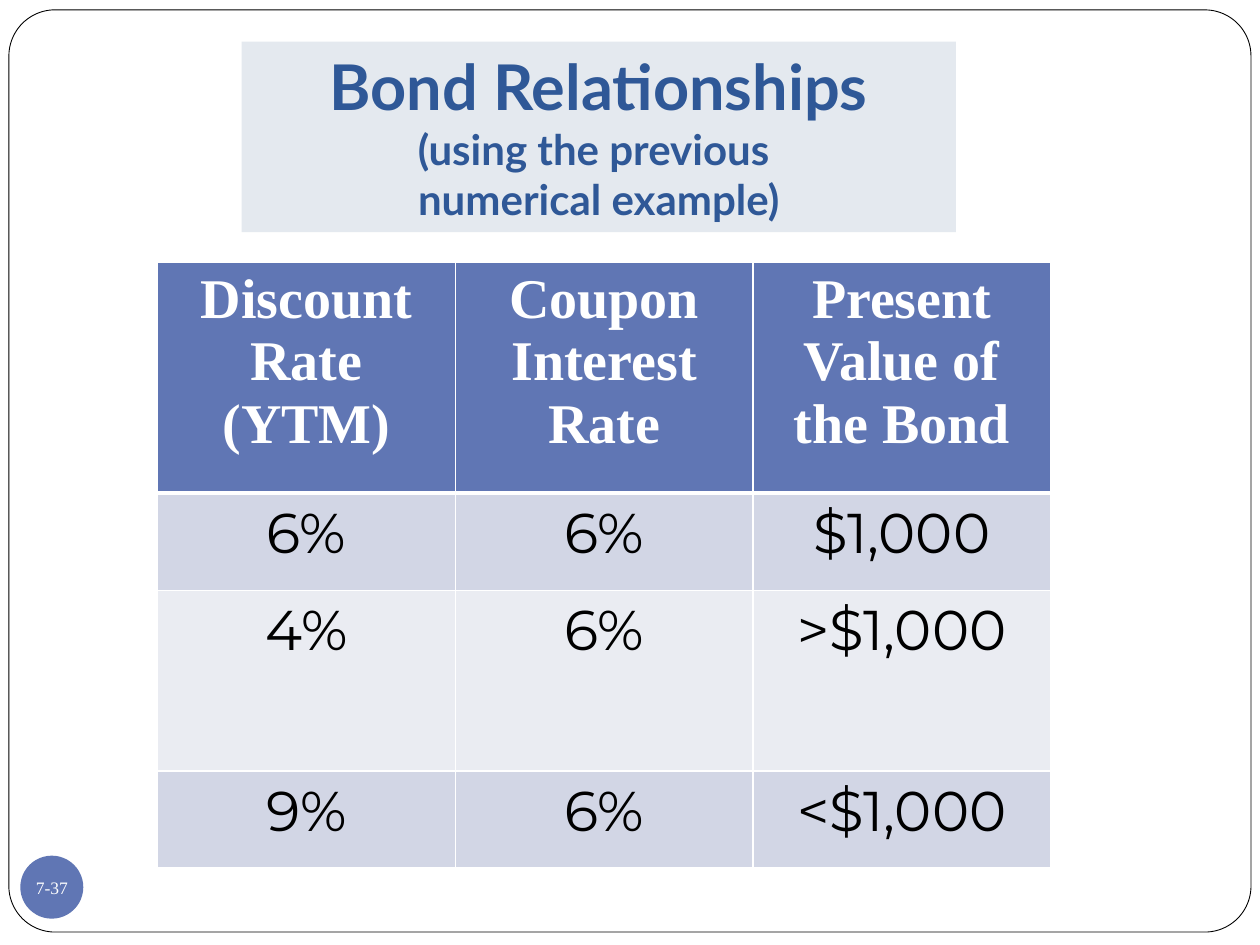
from lxml.etree import SubElement
from pptx import Presentation
from pptx.dml.color import RGBColor
from pptx.enum.shapes import MSO_SHAPE
from pptx.enum.text import MSO_ANCHOR, MSO_AUTO_SIZE, PP_ALIGN
from pptx.oxml.ns import qn
from pptx.util import Cm, Pt

WHITE = RGBColor(0xFF, 0xFF, 0xFF)
BLACK = RGBColor(0x00, 0x00, 0x00)
BLUE = RGBColor(0x60, 0x76, 0xB4)
NAVY = RGBColor(0x2F, 0x58, 0x97)
PALE = RGBColor(0xE4, 0xE9, 0xEF)
BANDS = [RGBColor(0xD2, 0xD6, 0xE5), RGBColor(0xEA, 0xEC, 0xF2)]

TITLE = [("Bond Relationships", 36),
         ("(using the previous ", 24),
         ("numerical example)", 24)]
PAGE = "7-37"
ROWS = [
    ("Discount Rate\n(YTM)", "Coupon Interest Rate", "Present Value of the Bond"),
    ("6%", "6%", "$1,000"),
    ("4%", "6%", ">$1,000"),
    ("9%", "6%", "<$1,000"),
]
ROW_HEIGHTS = [4.65, 1.96, 3.64, 1.96]
COL_WIDTH = 6.0


def format_paragraph(p, font, size, color, bold=False):
    p.alignment = PP_ALIGN.CENTER
    for r in p.runs:
        r.font.name = font
        r.font.size = Pt(size)
        r.font.bold = bold
        r.font.color.rgb = color


def add_panel(shapes, kind, box, fill):
    sp = shapes.add_shape(kind, *map(Cm, box))
    sp.shadow.inherit = False
    sp.fill.solid()
    sp.fill.fore_color.rgb = fill
    sp.line.fill.background()
    return sp


def set_borders(cell, widths):
    """Draw white borders; widths maps lnL, lnR, lnT and lnB to points."""
    tcPr = cell._tc.get_or_add_tcPr()
    for index, (side, width) in enumerate(widths.items()):
        ln = SubElement(tcPr, qn(f"a:{side}"), w=str(Pt(width)))
        fill = SubElement(ln, qn("a:solidFill"))
        SubElement(fill, qn("a:srgbClr"), val=str(WHITE))
        tcPr.insert(index, ln)


def add_frame(shapes):
    sp = add_panel(shapes, MSO_SHAPE.ROUNDED_RECTANGLE, (0.18, 0.2, 25.04, 18.59), WHITE)
    sp.adjustments[0] = 0.05
    sp.line.color.rgb = BLACK
    sp.line.width = Pt(0.5)
    shapes._spTree.insert(2, sp._element)  # behind the title


def add_page_number(shapes):
    sp = add_panel(shapes, MSO_SHAPE.OVAL, (0.41, 17.25, 1.27, 1.27), BLUE)
    tf = sp.text_frame
    tf.margin_left = tf.margin_right = tf.margin_top = tf.margin_bottom = 0
    tf.word_wrap = False
    tf.vertical_anchor = MSO_ANCHOR.MIDDLE
    tf.text = PAGE
    format_paragraph(tf.paragraphs[0], "Times New Roman", 10, WHITE)


def fill_title(title):
    title.left, title.top, title.width, title.height = map(Cm, (4.87, 0.84, 14.4, 3.84))
    title.fill.solid()
    title.fill.fore_color.rgb = PALE
    tf = title.text_frame
    tf.word_wrap = True
    tf.auto_size = MSO_AUTO_SIZE.SHAPE_TO_FIT_TEXT
    tf.vertical_anchor = MSO_ANCHOR.TOP
    tf.text = "\n".join(text for text, _ in TITLE)
    for p, (_, size) in zip(tf.paragraphs, TITLE):
        format_paragraph(p, "Lato", size, NAVY, bold=True)


def add_bond_table(shapes):
    cols = len(ROWS[0])
    table = shapes.add_table(len(ROWS), cols, Cm(3.18), Cm(5.29),
                             Cm(COL_WIDTH * cols), Cm(sum(ROW_HEIGHTS))).table
    for col in table.columns:
        col.width = Cm(COL_WIDTH)
    for i, (row, height, texts) in enumerate(zip(table.rows, ROW_HEIGHTS, ROWS)):
        row.height = Cm(height)
        header = i == 0
        for cell, text in zip(row.cells, texts):
            cell.fill.solid()
            cell.fill.fore_color.rgb = BLUE if header else BANDS[(i - 1) % 2]
            set_borders(cell, {"lnL": 1, "lnR": 1, "lnT": 3 if i == 1 else 1,
                               "lnB": 3 if header else 1})
            cell.text = text
            for p in cell.text_frame.paragraphs:
                if header:
                    format_paragraph(p, "Times New Roman", 32, WHITE, bold=True)
                else:
                    format_paragraph(p, "Montserrat", 32, BLACK)


def main():
    prs = Presentation()
    prs.slide_width, prs.slide_height = Cm(25.4), Cm(19.05)
    s = prs.slides.add_slide(prs.slide_layouts[5])
    add_frame(s.shapes)
    add_page_number(s.shapes)
    fill_title(s.shapes.title)
    add_bond_table(s.shapes)
    prs.save("out.pptx")


if __name__ == "__main__":
    main()
